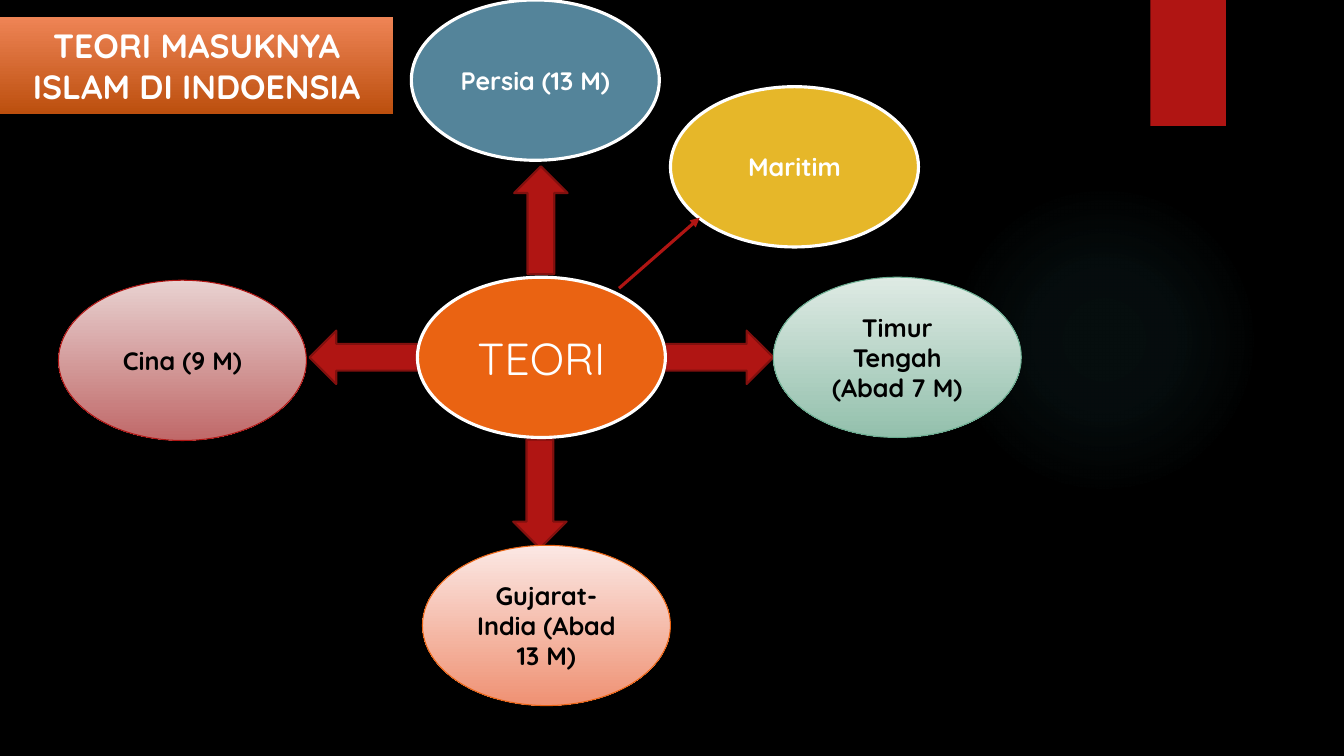
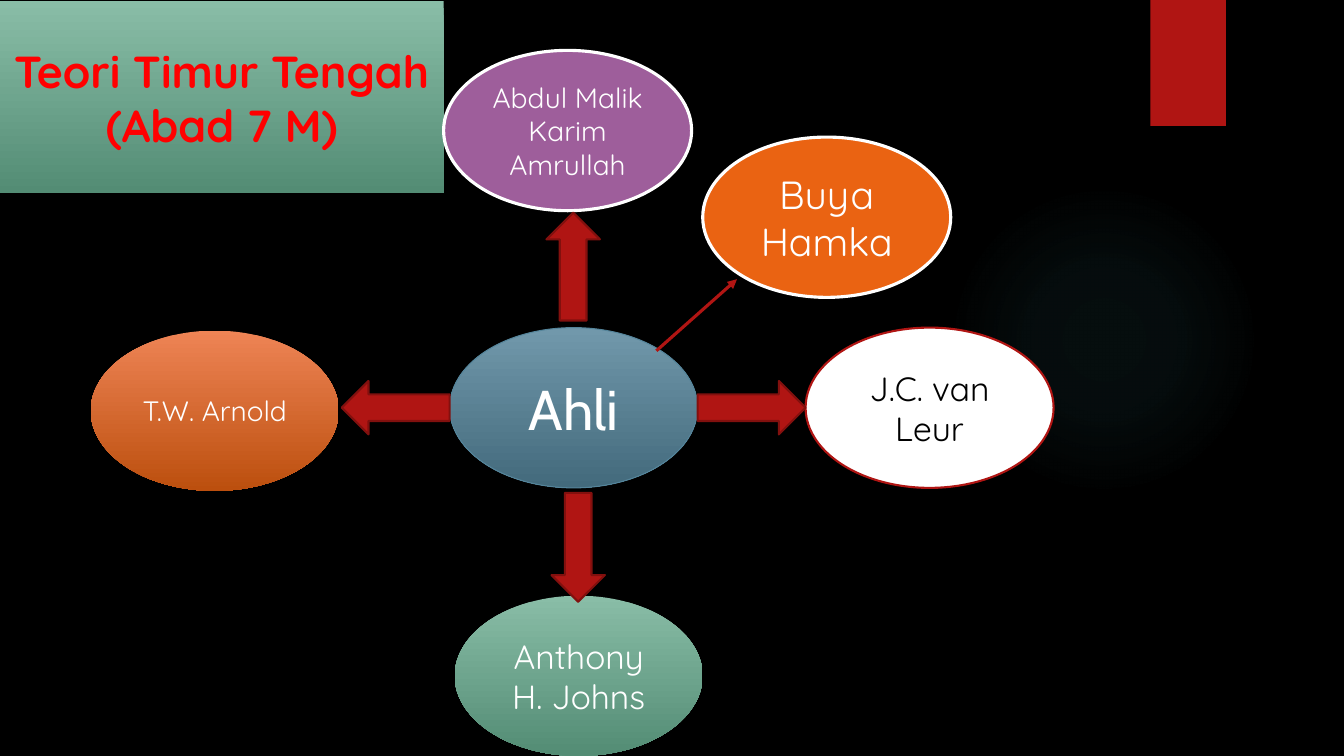
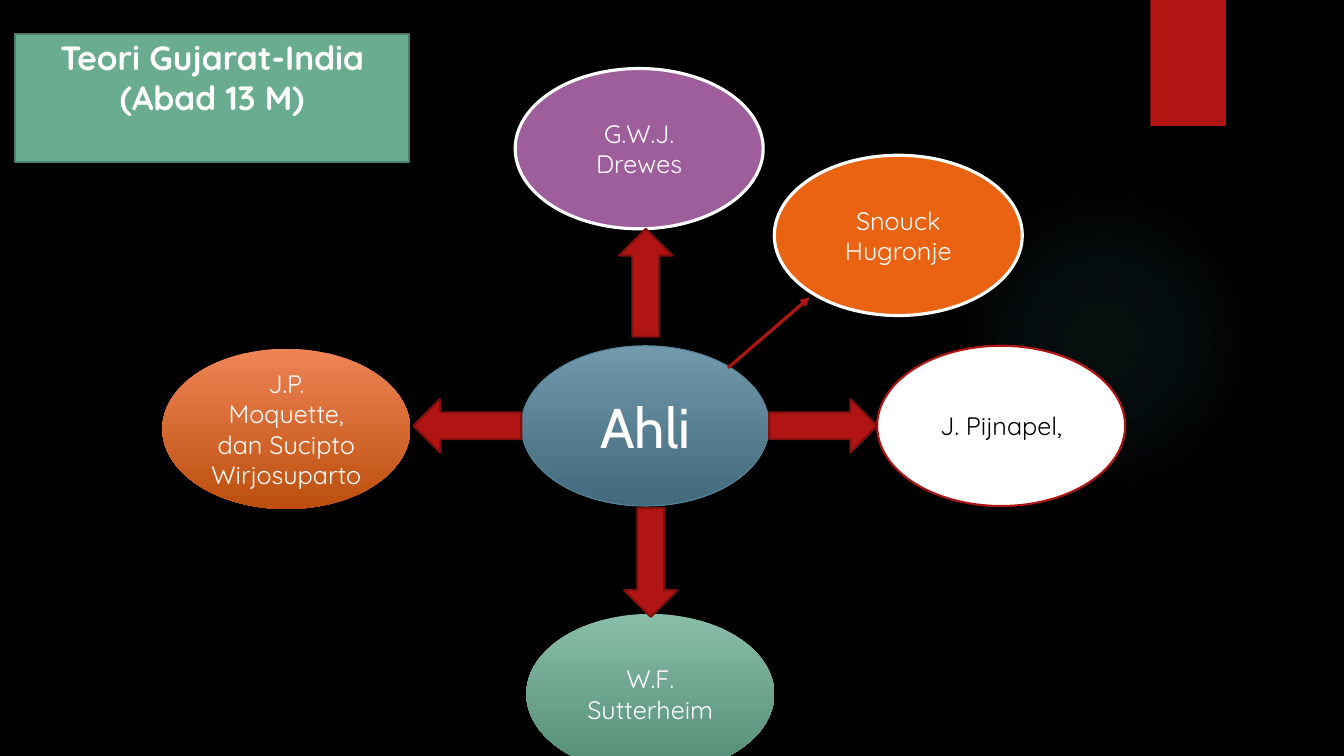
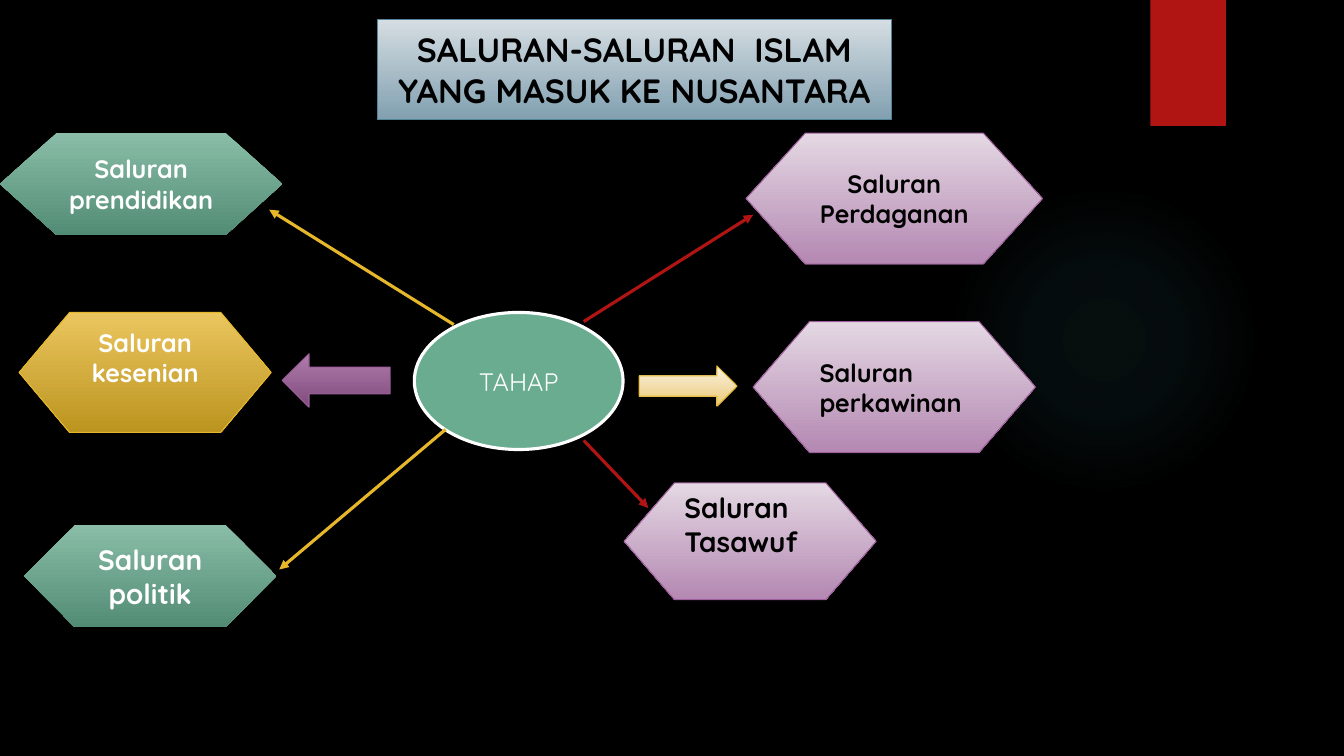
"""Four dark slides on how Islam reached Nusantara: three hub diagrams and one channel map."""
from lxml.etree import SubElement
from pptx import Presentation
from pptx.dml.color import RGBColor
from pptx.enum.shapes import MSO_CONNECTOR, MSO_SHAPE
from pptx.enum.text import MSO_ANCHOR, MSO_AUTO_SIZE, PP_ALIGN
from pptx.oxml import parse_xml
from pptx.oxml.ns import nsdecls, qn
from pptx.util import Inches, Pt

CELL = Inches(0.1)
COLUMNS, ROWS = 133.3, 75
FONT, HUB_FONT = "Quicksand", "Cabin"
COLORS = {
    "black": "000000", "white": "FFFFFF", "bright red": "FF0000",
    "red": "B01513", "dark red": "82100E", "orange": "EA6312",
    "yellow": "E6B729", "green": "6AAC90", "dark green": "4E7F6B",
    "blue": "54849A", "purple": "9E5E9B", "glow": "50B9C1",
}
STYLES = {
    "orange": (["EA6312"], "white", 2.25, "white"),
    "blue": (["54849A"], "white", 2.25, "white"),
    "yellow": (["E6B729"], "white", 2.25, "white"),
    "purple": (["9E5E9B"], "white", 2.25, "white"),
    "green": (["6AAC90"], "white", 2.25, "white"),
    "green box": (["6AAC90"], "dark green", 1.5, "white"),
    "white": (["FFFFFF"], "red", 1.5, "black"),
    "red": (["B01513"], "dark red", 1.5, "white"),
    "tab": (["B01513"], None, 0, "white"),
    "orange fade": (["EE8455", "BC4F0E"], None, 0, "white"),
    "green fade": (["89BDA7", "538C74"], None, 0, "white"),
    "green heading": (["89BDA7", "538C74"], None, 0, "bright red"),
    "blue fade": (["7198AB", "436A7C"], "blue", 0.75, "white"),
    "purple fade": (["AF7CAC", "7F4B7C"], "purple", 0.75, "white"),
    "yellow fade": (["EBC65F", "BB941F"], "yellow", 0.75, "white"),
    "pale green": (["DEEAE4", "93C0AC"], "green", 0.75, "black"),
    "pale red": (["E8D1D0", "C06969"], "red", 0.75, "black"),
    "pale orange": (["FBE8E4", "EF9173"], "orange", 0.75, "black"),
    "pale blue": (["D5DDE2", "81A0B0"], "blue", 0.75, "black"),
    "pale purple": (["E4D8E3", "B488B2"], "purple", 0.75, "black"),
    "pale yellow": (["FAF2E3", "ECC977"], "yellow", 0.75, "black"),
}
BUBBLE = (24.6, 15.9)
SPOKES = {
    "hub": (0, 0), "east": (35.3, 0), "west": (-35.6, 0.3),
    "south": (0.5, 26.6), "north": (-0.6, -27.5), "northeast": (25.1, -18.9),
}
OVAL, HEXAGON = MSO_SHAPE.OVAL, MSO_SHAPE.FLOWCHART_PREPARATION
LEFT, RIGHT = MSO_SHAPE.LEFT_ARROW, MSO_SHAPE.RIGHT_ARROW


def paint(shape, style):
    """Give a shape the fill and outline of a named style."""
    fills, line, width, _ = STYLES[style]
    if len(fills) == 1:
        shape.fill.solid()
        shape.fill.fore_color.rgb = RGBColor.from_string(fills[0])
    else:
        shape.fill.gradient()
        shape.fill.gradient_angle = 270
        for stop, color, position in zip(shape.fill.gradient_stops, fills, (0, 1)):
            stop.color.rgb = RGBColor.from_string(color)
            stop.position = position
    if line:
        shape.line.color.rgb = RGBColor.from_string(COLORS[line])
        shape.line.width = Pt(width)
    else:
        shape.line.fill.background()


def write(shape, style, text, size, bold=True, font=FONT, align=PP_ALIGN.CENTER, lift=0.0):
    """Set one centred text in a shape, raised by half of lift cells."""
    frame = shape.text_frame
    frame.word_wrap = True
    frame.auto_size = MSO_AUTO_SIZE.NONE
    frame.vertical_anchor = MSO_ANCHOR.MIDDLE
    frame.margin_bottom = int((0.5 + lift) * CELL)
    paragraph = frame.paragraphs[0]
    paragraph.alignment = align
    run = paragraph.add_run()
    run.text = text
    run.font.name = font
    run.font.size = Pt(size)
    run.font.bold = bold
    run.font.color.rgb = RGBColor.from_string(COLORS[STYLES[style][3]])


hub_slides = [
    {
        "title": ("round2SameRect", (0, 1.7, 39, 9.6), "orange fade",
                  {"text": "TEORI MASUKNYA ISLAM DI INDOENSIA", "size": 24}),
        "hub": (41.4, 27.5), "up": (9.6, -11), "down": (9.5, 16.1),
        "line": (20, 1.1, 28, -5.9), "arrows on top": False,
        "bubbles": {
            "hub": ("orange", "TEORI", 32, False, FONT),
            "east": ("pale green", "Timur Tengah (Abad 7 M)", 18, True, FONT),
            "west": ("pale red", "Cina (9 M)", 18, True, FONT),
            "south": ("pale orange", "Gujarat-India (Abad 13 M)", 18, True, FONT),
            "north": ("blue", "Persia (13 M)", 18, True, FONT),
            "northeast": ("yellow", "Maritim", 18, True, FONT),
        },
    },
    {
        "title": ("flowChartAlternateProcess", (0, 0.1, 44, 19.1), "green heading",
                  {"text": "Teori Timur Tengah (Abad 7 M)", "size": 32}),
        "hub": (44.6, 32.5), "up": (9.6, -11.4), "down": (10.1, 16.4),
        "line": (20.5, 2.3, 28.5, -4.8), "arrows on top": True,
        "bubbles": {
            "hub": ("blue fade", "Ahli", 40, False, HUB_FONT),
            "east": ("white", "J.C. van Leur", 24, False, FONT),
            "west": ("orange fade", "T.W. Arnold", 20, False, FONT),
            "south": ("green fade", "Anthony H. Johns", 24, False, FONT),
            "north": ("purple", "Abdul Malik Karim Amrullah", 20, False, FONT),
            "northeast": ("orange", "Buya Hamka", 28, False, FONT),
        },
    },
    {
        "title": ("flowChartAlternateProcess", (1.5, 3.4, 39.1, 12.7), "green box",
                  {"text": "Teori Gujarat-India (Abad 13 M)", "size": 24, "lift": 4.2}),
        "hub": (51.7, 34.3), "up": (9.7, -11.6), "down": (10.2, 16.1),
        "line": (20.5, 2.2, 28.6, -4.8), "arrows on top": True,
        "bubbles": {
            "hub": ("blue fade", "Ahli", 40, False, HUB_FONT),
            "east": ("white", "J. Pijnapel,", 18, False, FONT),
            "west": ("orange fade", "J.P. Moquette, dan Sucipto Wirjosuparto", 18, False, FONT),
            "south": ("green fade", "W.F. Sutterheim", 18, False, FONT),
            "north": ("purple", "G.W.J. Drewes", 18, False, FONT),
            "northeast": ("orange", "Snouck Hugronje", 18, False, FONT),
        },
    },
]

pages = []
for diagram in hub_slides:
    hub_left, hub_top = diagram["hub"]
    bubbles = []
    for spoke, (style, text, size, bold, font) in diagram["bubbles"].items():
        across, down = SPOKES[spoke]
        bubbles.append((OVAL, (hub_left + across, hub_top + down, *BUBBLE), style,
                        {"text": text, "size": size, "bold": bold, "font": font}))
    arrows = []
    for kind, (across, down), size in (
        (LEFT, (-10.7, 5.3), (10.7, 5.3)),
        (RIGHT, (24.6, 5.3), (10.7, 5.3)),
        (MSO_SHAPE.UP_ARROW, diagram["up"], (5.3, 10.7)),
        (MSO_SHAPE.DOWN_ARROW, diagram["down"], (5.3, 10.8)),
    ):
        arrows.append((kind, (hub_left + across, hub_top + down, *size), "red", None))
    start_x, start_y, end_x, end_y = diagram["line"]
    line = (hub_left + start_x, hub_top + start_y, hub_left + end_x, hub_top + end_y, "red")
    shapes = bubbles + arrows if diagram["arrows on top"] else arrows + bubbles
    pages.append((diagram["title"], shapes, [line]))

pages.append((
    ("roundRect", (37.4, 1.9, 51, 10), "pale blue",
     {"text": "SALURAN-SALURAN  ISLAM YANG MASUK KE NUSANTARA", "size": 24}),
    [
        (OVAL, (41.1, 31, 20.7, 13.6), "green", {"text": "TAHAP", "size": 18, "bold": False}),
        (LEFT, (28, 35.1, 10.7, 5.3), "purple fade", None),
        (HEXAGON, (74.7, 31.9, 28, 13), "pale purple",
         {"text": "Saluran perkawinan", "size": 18, "align": PP_ALIGN.LEFT}),
        (HEXAGON, (1.9, 31, 25, 11.9), "yellow fade",
         {"text": "Saluran kesenian", "size": 18, "lift": 3}),
        (HEXAGON, (0, 13.2, 28, 10.1), "green fade", {"text": "Saluran prendidikan", "size": 18}),
        (HEXAGON, (74, 13.2, 29.4, 13), "pale purple", {"text": "Saluran Perdaganan", "size": 18}),
        (HEXAGON, (61.9, 47.9, 25, 11.6), "pale purple",
         {"text": "Saluran Tasawuf", "size": 20, "align": PP_ALIGN.LEFT, "lift": 3.4}),
        (HEXAGON, (2.4, 52.1, 25, 10.1), "green fade", {"text": "Saluran politik", "size": 20}),
        (RIGHT, (63.4, 36.3, 9.7, 4), "pale yellow", None),
    ],
    [
        (57.9, 31.9, 74.7, 21.3, "red"), (57.9, 43.7, 64.3, 50.4, "red"),
        (45, 32.2, 26.7, 20.8, "yellow"), (44.2, 42.6, 27.7, 56.5, "yellow"),
    ],
))

presentation = Presentation()
presentation.slide_width = int(COLUMNS * CELL)
presentation.slide_height = int(ROWS * CELL)
master = presentation.slide_master
master.background.fill.solid()
master.background.fill.fore_color.rgb = RGBColor.from_string(COLORS["black"])
title_only = presentation.slide_layouts[5]

for (outline, box, title_style, title_text), shapes, lines in pages:
    slide = presentation.slides.add_slide(title_only)
    title = slide.shapes.title
    title.left, title.top, title.width, title.height = [int(length * CELL) for length in box]
    SubElement(title.element.spPr, qn("a:prstGeom"), prst=outline)
    paint(title, title_style)
    write(title, title_style, **title_text)
    for kind, box, style, text in shapes:
        shape = slide.shapes.add_shape(kind, *[int(length * CELL) for length in box])
        shape.shadow.inherit = False
        paint(shape, style)
        if text:
            write(shape, style, **text)
    for *ends, color in lines:
        connector = slide.shapes.add_connector(
            MSO_CONNECTOR.STRAIGHT, *[int(length * CELL) for length in ends])
        connector.line.color.rgb = RGBColor.from_string(COLORS[color])
        connector.line.width = Pt(2.25)
        properties = connector.element.spPr
        SubElement(properties.find(qn("a:ln")), qn("a:tailEnd"), type="triangle")
        SubElement(properties, qn("a:effectLst"))

first_slide = presentation.slides[0]
glow = first_slide.shapes.add_shape(OVAL, *[int(length * CELL) for length in (94.1, 18.3, 30.8, 30.8)])
glow.shadow.inherit = False
glow.line.fill.background()
stops = "".join(
    f'<a:gs pos="{position}000"><a:srgbClr val="{COLORS["glow"]}">'
    f'<a:alpha val="{alpha}000"/></a:srgbClr></a:gs>'
    for position, alpha in ((0, 7), (36, 6), (69, 0)))
glow.element.spPr.insert(2, parse_xml(
    f'<a:gradFill {nsdecls("a")}><a:gsLst>{stops}</a:gsLst><a:path path="circle">'
    '<a:fillToRect l="50000" t="50000" r="50000" b="50000"/></a:path></a:gradFill>'))
tab = first_slide.shapes.add_shape(
    MSO_SHAPE.RECTANGLE, *[int(length * CELL) for length in (114.1, 0, 7.5, 12.5)])
tab.shadow.inherit = False
paint(tab, "tab")
for number, shape in enumerate((glow, tab), start=101):
    shape.element.nvSpPr.cNvPr.set("id", str(number))
    master.shapes.element.append(shape.element)

presentation.save("out.pptx")
